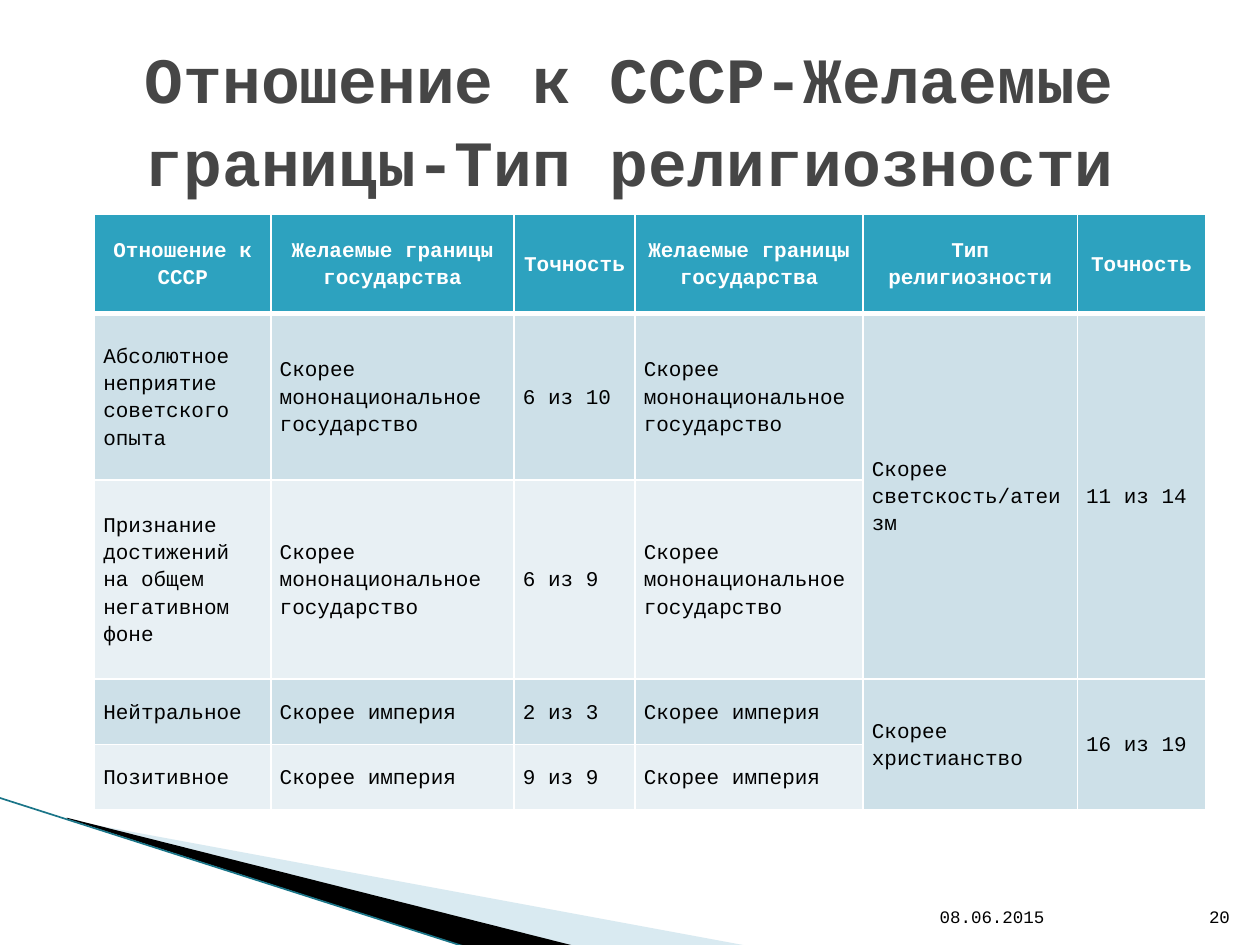
from lxml.etree import SubElement
from pptx import Presentation
from pptx.dml.color import RGBColor
from pptx.enum.shapes import MSO_CONNECTOR
from pptx.enum.text import MSO_ANCHOR as Anchor, PP_ALIGN as Align
from pptx.oxml.ns import qn
from pptx.util import Inches, Pt

WIDTH, HEIGHT = Inches(10), Inches(7.5)
FONT = "Courier New"
BLACK = RGBColor(0, 0, 0)
WHITE = RGBColor(255, 255, 255)
TITLE_GRAY = RGBColor(0x46, 0x46, 0x46)
HEADER_TEAL = RGBColor(0x2D, 0xA2, 0xBF)
BAND_DARK = RGBColor(0xCD, 0xE0, 0xE8)
BAND_LIGHT = RGBColor(0xE8, 0xF0, 0xF4)
WEDGE_BLUE = RGBColor(0xA0, 0xCB, 0xDC)
EDGE_TEAL = RGBColor(0x1A, 0x75, 0x88)

COLUMN_SHARES = [14, 19.3, 9.6, 18.1, 17, 10.2]
ROW_SHARES = [10.53, 17.6, 21.07, 6.93, 6.93]
NATION = "Скорее мононациональное государство"
EMPIRE = "Скорее империя"
BORDERS = "Желаемые границы государства"
# None marks a cell covered by the one above it.
ROWS = [
    ["Отношение к СССР", BORDERS, "Точность", BORDERS, "Тип религиозности", "Точность"],
    ["Абсолютное неприятие советского опыта", NATION, "6 из 10", NATION,
     "Скорее светскость/атеизм", "11 из 14"],
    ["Признание достижений на общем негативном фоне", NATION, "6 из 9", NATION, None, None],
    ["Нейтральное", EMPIRE, "2 из 3", EMPIRE, "Скорее христианство", "16 из 19"],
    ["Позитивное", EMPIRE, "9 из 9", EMPIRE, None, None],
]


def across(percent):
    return round(WIDTH * percent / 100)


def down(percent):
    return round(HEIGHT * percent / 100)


def write(frame, text, size=12, color=BLACK, bold=False, align=Align.LEFT, spacing=None):
    frame.word_wrap = True
    para = frame.paragraphs[0]
    para.alignment = align
    if spacing:
        para.line_spacing = spacing
    span = para.add_run()
    span.text = text
    span.font.name = FONT
    span.font.size = Pt(size)
    span.font.bold = bold
    span.font.color.rgb = color


def add_text(page, place, text, anchor=Anchor.BOTTOM, **style):
    left, top, width, height = place
    box = page.shapes.add_textbox(across(left), down(top), across(width), down(height))
    box.text_frame.vertical_anchor = anchor
    write(box.text_frame, text, **style)


def add_wedge(page, points, color, opacity=None):
    corners = [(across(x), down(y)) for x, y in points]
    builder = page.shapes.build_freeform(*corners[0])
    builder.add_line_segments(corners[1:], close=True)
    wedge = builder.convert_to_shape()
    wedge.shadow.inherit = False
    wedge.fill.solid()
    wedge.fill.fore_color.rgb = color
    wedge.line.fill.background()
    if opacity:
        tint = next(wedge.element.spPr.iter(qn("a:srgbClr")))
        SubElement(tint, qn("a:alpha"), val=str(opacity * 1000))


def add_edge(page, start, end):
    edge = page.shapes.add_connector(
        MSO_CONNECTOR.STRAIGHT, across(start[0]), down(start[1]), across(end[0]), down(end[1]))
    edge.line.color.rgb = EDGE_TEAL
    edge.line.width = Pt(0.95)
    SubElement(edge.element.spPr, qn("a:effectLst"))


def set_borders(cell, top=1, bottom=1):
    """Draw white borders; must run before the cell gets its fill."""
    properties = cell._tc.get_or_add_tcPr()
    for side, points in (("L", 1), ("R", 1), ("T", top), ("B", bottom)):
        line = SubElement(properties, qn(f"a:ln{side}"), w=str(Pt(points)))
        fill = SubElement(line, qn("a:solidFill"))
        SubElement(fill, qn("a:srgbClr"), val=str(WHITE))


def style_cell(cell, row):
    cell.vertical_anchor = Anchor.MIDDLE
    cell.margin_left = cell.margin_right = Inches(0.07)
    cell.margin_top = cell.margin_bottom = 0
    set_borders(cell, top=3 if row == 1 else 1, bottom=3 if row == 0 else 1)
    cell.fill.solid()
    band = BAND_DARK if row % 2 else BAND_LIGHT
    cell.fill.fore_color.rgb = band if row else HEADER_TEAL


def add_rules_table(page):
    table = page.shapes.add_table(
        len(ROWS), len(COLUMN_SHARES), across(7.5), down(22.67),
        across(sum(COLUMN_SHARES)), down(sum(ROW_SHARES))).table
    for column, share in zip(table.columns, COLUMN_SHARES):
        column.width = across(share)
    for row, share in zip(table.rows, ROW_SHARES):
        row.height = down(share)
    header = {"color": WHITE, "bold": True, "align": Align.CENTER}
    for r, texts in enumerate(ROWS):
        for c, text in enumerate(texts):
            cell = table.cell(r, c)
            style_cell(cell, r)
            if text is None:
                table.cell(r - 1, c).merge(cell)
            else:
                write(cell.text_frame, text, spacing=1.15, **({} if r else header))


def main():
    deck = Presentation()
    deck.slide_width, deck.slide_height = WIDTH, HEIGHT
    page = deck.slides.add_slide(deck.slide_layouts[6])
    add_wedge(page, [(5.5, 86.8), (59.5, 100.13), (45.6, 100.13), (5.5, 86.67)],
              WEDGE_BLUE, opacity=40)
    add_wedge(page, [(5.3, 86.53), (45.7, 100.13), (37.2, 100.27), (5.4, 86.67)], BLACK)
    add_edge(page, (-0.1, 84.4), (37.1, 100.27))
    add_text(page, (73.6, 93.47, 21, 5.33), "08.06.2015", size=10)
    add_text(page, (94.6, 93.47, 4, 5.33), "20", size=10, align=Align.RIGHT)
    add_text(page, (5, 4, 90, 16.67), "Отношение к СССР-Желаемые границы-Тип религиозности",
             anchor=Anchor.MIDDLE, size=36.9, color=TITLE_GRAY, bold=True,
             align=Align.CENTER, spacing=1.07)
    add_rules_table(page)
    deck.save("out.pptx")


if __name__ == "__main__":
    main()
